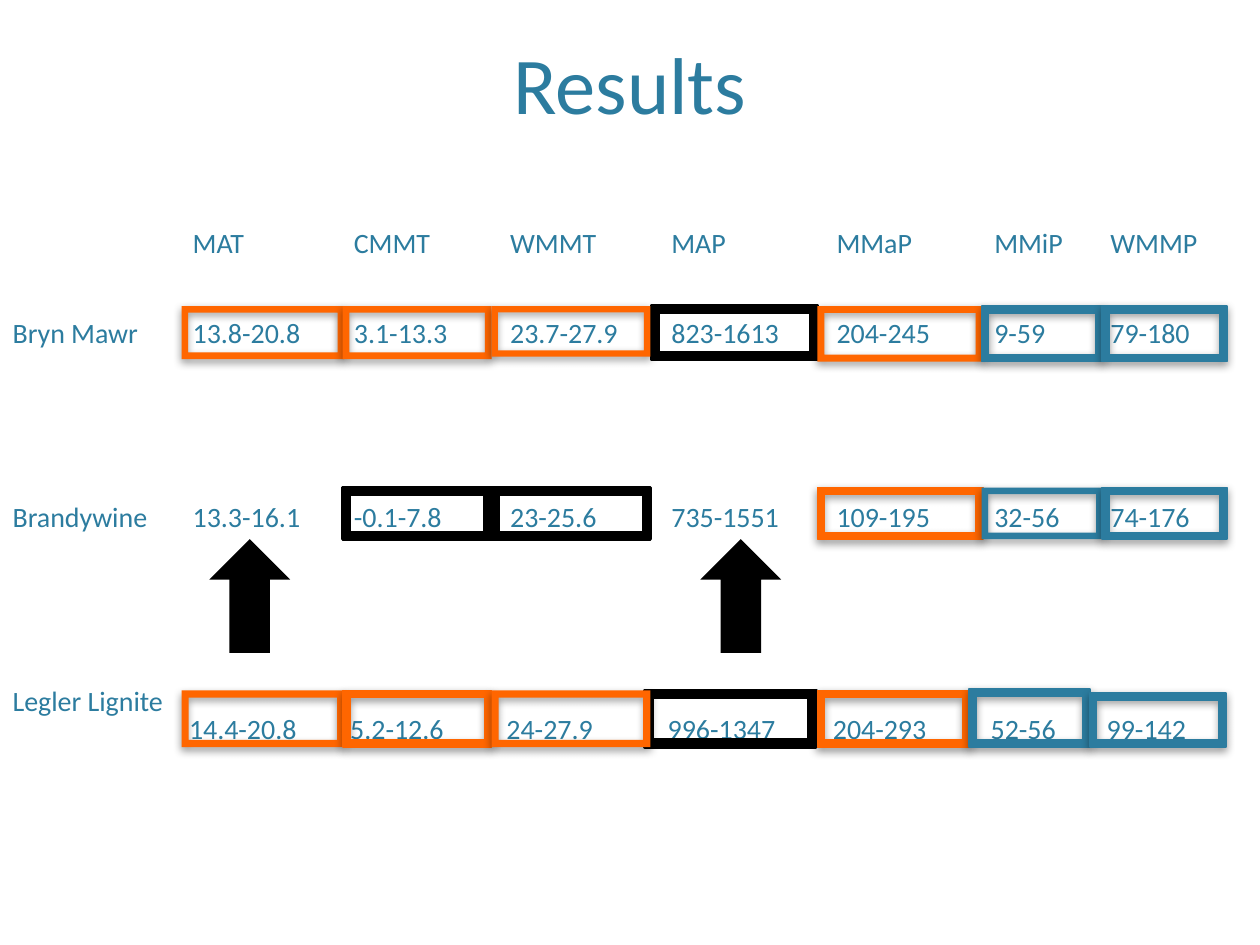
from lxml import etree
from pptx import Presentation
from pptx.dml.color import RGBColor
from pptx.enum.shapes import MSO_SHAPE
from pptx.enum.text import MSO_ANCHOR, PP_ALIGN
from pptx.oxml.ns import qn
from pptx.util import Cm, Pt

FRAME, UP_ARROW = MSO_SHAPE.FRAME, MSO_SHAPE.UP_ARROW
BOTTOM, CENTER = MSO_ANCHOR.BOTTOM, PP_ALIGN.CENTER

BLUE = RGBColor(0x2C, 0x7C, 0x9F)
ORANGE = RGBColor(0xFF, 0x66, 0x00)
BLACK = RGBColor(0x00, 0x00, 0x00)

COLUMN_WIDTHS = [3.63, 3.25, 3.15, 3.25, 3.33, 3.18, 2.34, 2.74]
ROW_HEIGHTS = [1.8, 3.71, 3.71, 2.95]
CLIMATE = [
    ["", "MAT", "CMMT", "WMMT", "MAP", "MMaP", "MMiP", "WMMP"],
    ["Bryn Mawr", "13.8-20.8", "3.1-13.3", "23.7-27.9", "823-1613",
     "204-245", "9-59", "79-180"],
    ["Brandywine", "13.3-16.1", "-0.1-7.8", "23-25.6", "735-1551",
     "109-195", "32-56", "74-176"],
    ["Legler Lignite", "14.4-20.8", "5.2-12.6", "24-27.9", "996-1347",
     "204-293", "52-56", "99-142"],
]

# Left edge and width of the frames around each variable, in cm
MAT, CMMT, WMMT = (3.66, 3.28), (6.91, 3.0), (9.91, 3.2)
MAP, MMAP = (13.13, 3.35), (16.48, 3.33)
MMIP, WMMP = (19.79, 2.44), (22.22, 2.51)

# Top and height of the frames at each site, in cm
BRYN_MAWR, BRANDYWINE, LEGLER = (6.17, 1.07), (9.83, 1.04), (13.92, 1.14)
BRYN_MAWR_TALL = (6.17, 1.12)

# Column span, row span, colour, line width in points
FRAMES = [
    (CMMT, BRANDYWINE, BLACK, 2),
    (WMMT, BRANDYWINE, BLACK, 2),
    (MAP, BRYN_MAWR, BLACK, 2),
    ((13.0, 3.45), LEGLER, BLACK, 2),
    (MAT, BRYN_MAWR, ORANGE, 0),
    (MAT, LEGLER, ORANGE, 0),
    (CMMT, BRYN_MAWR, ORANGE, 0),
    (CMMT, LEGLER, ORANGE, 1),
    (WMMT, (6.17, 1.02), ORANGE, 0),
    (WMMT, LEGLER, ORANGE, 0),
    (MMAP, BRYN_MAWR_TALL, ORANGE, 0),
    (MMAP, BRANDYWINE, ORANGE, 1),
    ((16.48, 3.07), LEGLER, ORANGE, 1),
    (MMIP, BRYN_MAWR_TALL, BLUE, 1),
    (MMIP, BRANDYWINE, BLUE, 0),
    ((19.53, 2.44), (13.89, 1.17), BLUE, 1),
    (WMMP, BRYN_MAWR_TALL, BLUE, 1),
    (WMMP, BRANDYWINE, BLUE, 1),
    ((21.97, 2.74), (13.97, 1.09), BLUE, 1),
]
ARROW_LEFTS = [4.22, 14.12]


def write_text(text_frame, text, size=16, color=BLUE, align=None, spacing=None):
    para = text_frame.paragraphs[0]
    para.alignment = align
    para.line_spacing = spacing
    span = para.add_run()
    span.text = text
    span.font.name = "Calibri"
    span.font.size = Pt(size)
    span.font.bold = False
    span.font.color.rgb = color


def add_title(page, text):
    title = page.shapes.title
    title.left, title.top = Cm(1.52), Cm(0)
    title.width, title.height = Cm(22.35), Cm(2.77)
    title.text_frame.vertical_anchor = BOTTOM
    write_text(title.text_frame, text, size=46, align=CENTER)


def add_climate_table(page):
    holder = page.shapes.add_table(
        len(CLIMATE), len(COLUMN_WIDTHS), Cm(0), Cm(4.45),
        Cm(sum(COLUMN_WIDTHS)), Cm(sum(ROW_HEIGHTS)))
    table = holder.table
    table.first_row = table.horz_banding = False
    for column, width in zip(table.columns, COLUMN_WIDTHS):
        column.width = Cm(width)
    for row, height, values in zip(table.rows, ROW_HEIGHTS, CLIMATE):
        row.height = Cm(height)
        for index, (cell, text) in enumerate(zip(row.cells, values)):
            cell.fill.background()
            lowered = values is CLIMATE[-1] and index > 0
            if lowered:
                cell.margin_left = cell.margin_right = Cm(0.18)
                cell.margin_top = cell.margin_bottom = Cm(0)
            if text:
                write_text(cell.text_frame, text,
                           spacing=2.0 if lowered else None)


def add_shadow(shape):
    effects = shape._element.spPr.find(qn("a:effectLst"))
    shadow = etree.SubElement(
        effects, qn("a:outerShdw"), blurRad=str(Pt(5)), dist=str(Pt(2)),
        dir="5400000", rotWithShape="0")
    color = etree.SubElement(shadow, qn("a:srgbClr"), val=str(BLACK))
    etree.SubElement(color, qn("a:alpha"), val="40000")


def add_mark(page, kind, across, down, color, line_width=0):
    (left, width), (top, height) = across, down
    shape = page.shapes.add_shape(kind, Cm(left), Cm(top), Cm(width), Cm(height))
    shape.shadow.inherit = False
    shape.fill.solid()
    shape.fill.fore_color.rgb = color
    if line_width:
        shape.line.color.rgb = color
        shape.line.width = Pt(line_width)
    else:
        shape.line.fill.background()
    return shape


def main():
    deck = Presentation()
    deck.slide_width, deck.slide_height = Cm(25.4), Cm(19.05)
    page = deck.slides.add_slide(deck.slide_layouts[5])

    add_title(page, "Results")
    add_climate_table(page)

    # Frames around the estimates; coloured ones cast a shadow
    for across, down, color, line_width in FRAMES:
        frame = add_mark(page, FRAME, across, down, color, line_width)
        if color != BLACK:
            add_shadow(frame)

    # Arrows pointing at the unframed Brandywine estimates
    for left in ARROW_LEFTS:
        add_mark(page, UP_ARROW, (left, 1.63), (10.87, 2.29), BLACK)

    deck.save("out.pptx")


if __name__ == "__main__":
    main()
